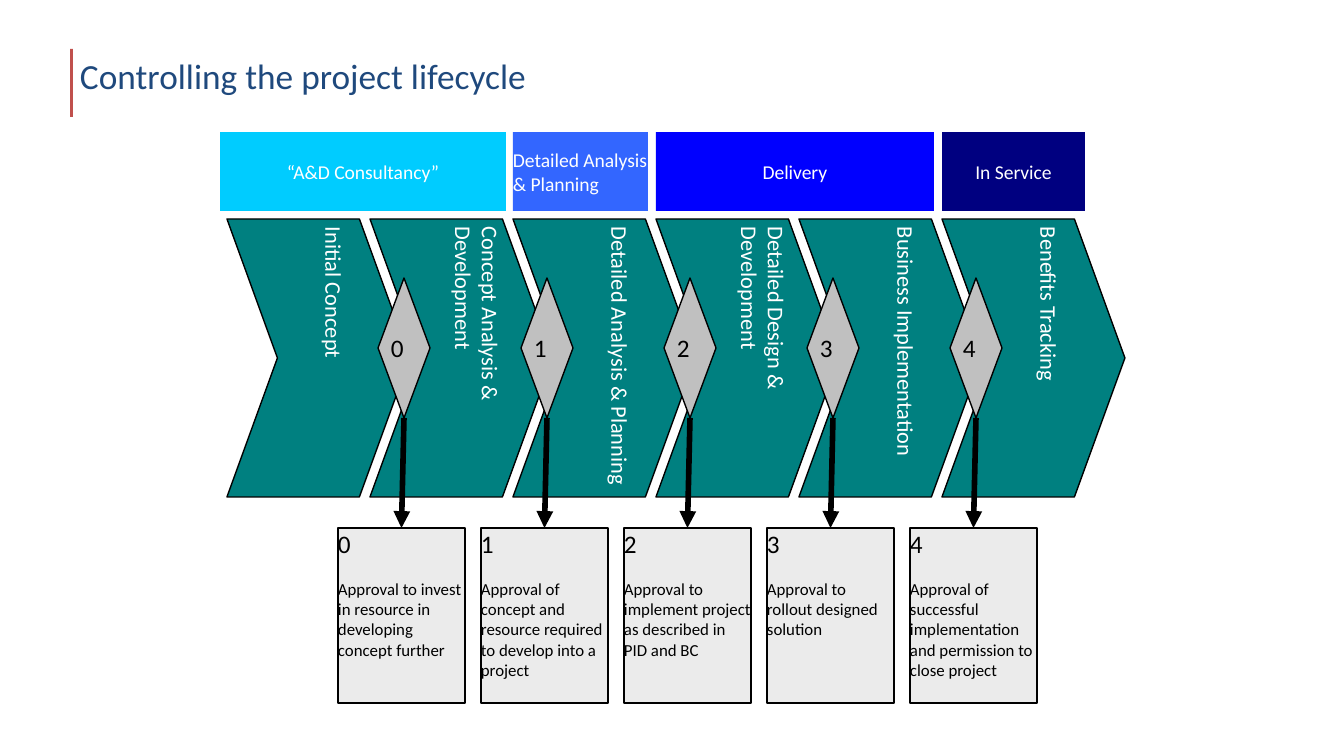
"""Build the slide that shows project stages, approval gates and their criteria."""
import pptx
import pptx.dml.color
import pptx.enum.shapes
import pptx.enum.text
import pptx.oxml.ns
import pptx.util
from lxml import etree

SHAPE = pptx.enum.shapes.MSO_SHAPE
ALIGN = pptx.enum.text.PP_ALIGN
ANCHOR = pptx.enum.text.MSO_ANCHOR
qn = pptx.oxml.ns.qn
THEME = {
    "font": "Calibri", "title": "1F497D", "accent": "C0504D", "stage": "008080",
    "gate": "C0C0C0", "dark": "000000", "light": "FFFFFF",
    "title_size": 18.9, "gate_size": 13.5, "stage_size": 12, "band_size": 10.5, "note_size": 9,
}
PX = 914400 / 134.4
PITCH = 143


def add_block(kind, box, fill, outlined=False):
    block = slide.shapes.add_shape(kind, *[round(v * PX) for v in box])
    block.shadow.inherit = False
    block.fill.solid()
    block.fill.fore_color.rgb = pptx.dml.color.RGBColor.from_string(fill)
    if outlined:
        block.line.color.rgb = pptx.dml.color.RGBColor.from_string(THEME["dark"])
        block.line.width = pptx.util.Pt(0.75)
    else:
        block.line.fill.background()
    return block


def write(shape, text, sizes, color, anchor=ANCHOR.MIDDLE, align=ALIGN.LEFT, insets=(0, 0, 0, 0)):
    frame = shape.text_frame
    frame.text = text
    frame.word_wrap = True
    frame.vertical_anchor = anchor
    frame.margin_left, frame.margin_top, frame.margin_right, frame.margin_bottom = [
        round(v * PX) for v in insets]
    for index, paragraph in enumerate(frame.paragraphs):
        paragraph.alignment = align
        for run in paragraph.runs:
            run.font.name = THEME["font"]
            run.font.size = pptx.util.Pt(sizes[min(index, len(sizes) - 1)])
            run.font.color.rgb = pptx.dml.color.RGBColor.from_string(color)


deck = pptx.Presentation()
deck.slide_width, deck.slide_height = round(1344 * PX), round(756 * PX)
slide = deck.slides.add_slide(deck.slide_layouts[6])

add_block(SHAPE.RECTANGLE, (70, 49, 3, 68), THEME["accent"])
title = slide.shapes.add_textbox(*[round(v * PX) for v in (67, 47, 1168, 91)])
write(title, "Controlling the project lifecycle", [THEME["title_size"]], THEME["title"],
      anchor=ANCHOR.TOP, insets=(13, 7, 13, 7))

stages = ["Initial Concept", "Concept Analysis & Development", "Detailed Analysis & Planning",
          "Detailed Design & Development", "Business Implementation", "Benefits Tracking"]
for index, name in enumerate(stages):
    stage = add_block(SHAPE.CHEVRON, (227 + index * PITCH, 219, 183, 278), THEME["stage"], True)
    stage.adjustments[0] = 0.276
    write(stage, name, [THEME["stage_size"]], THEME["light"], insets=(40, 8, 8, 8))
    stage.text_frame._txBody.bodyPr.set("vert", "eaVert")

bands = [
    ("“A&D Consultancy”", 220, 286, "00CCFF", ALIGN.CENTER),
    ("Detailed Analysis & Planning", 513, 135, "3366FF", ALIGN.LEFT),
    ("Delivery", 656, 278, "0000FF", ALIGN.CENTER),
    ("In Service", 942, 143, "000080", ALIGN.CENTER),
]
for name, left, width, color, align in bands:
    band = add_block(SHAPE.RECTANGLE, (left, 132, width, 79), color)
    write(band, name, [THEME["band_size"]], THEME["light"], align=align)

approvals = [
    "Approval to invest in resource in developing concept further",
    "Approval of concept and resource required to develop into a project",
    "Approval to\nimplement project as described in PID and BC",
    "Approval to rollout designed solution",
    "Approval of successful implementation and permission to close project",
]
for number, approval in enumerate(approvals):
    offset = number * PITCH
    gate = add_block(SHAPE.DIAMOND, (378 + offset, 278, 52, 140), THEME["gate"], True)
    write(gate, str(number), [THEME["gate_size"]], THEME["dark"])

    criteria = add_block(SHAPE.RECTANGLE, (338 + offset, 528, 127, 175), THEME["gate"], True)
    tint = criteria.fill._xPr.find(qn("a:solidFill"))[0]
    etree.SubElement(tint, qn("a:alpha"), val="30000")
    write(criteria, f"{number}\n{approval}", [THEME["gate_size"], THEME["note_size"]],
          THEME["dark"], anchor=ANCHOR.TOP)
    criteria.text_frame.paragraphs[1].space_before = pptx.util.Pt(11)

    arrow = slide.shapes.add_connector(pptx.enum.shapes.MSO_CONNECTOR.STRAIGHT, 0, 0, 0, 0)
    arrow.begin_connect(gate, 2)
    arrow.end_connect(criteria, 0)
    arrow.line.width = pptx.util.Pt(3)
    arrow.line.color.rgb = pptx.dml.color.RGBColor.from_string(THEME["dark"])
    etree.SubElement(arrow.line._get_or_add_ln(), qn("a:tailEnd"), type="triangle")
    etree.SubElement(arrow._element.spPr, qn("a:effectLst"))

deck.save("out.pptx")
